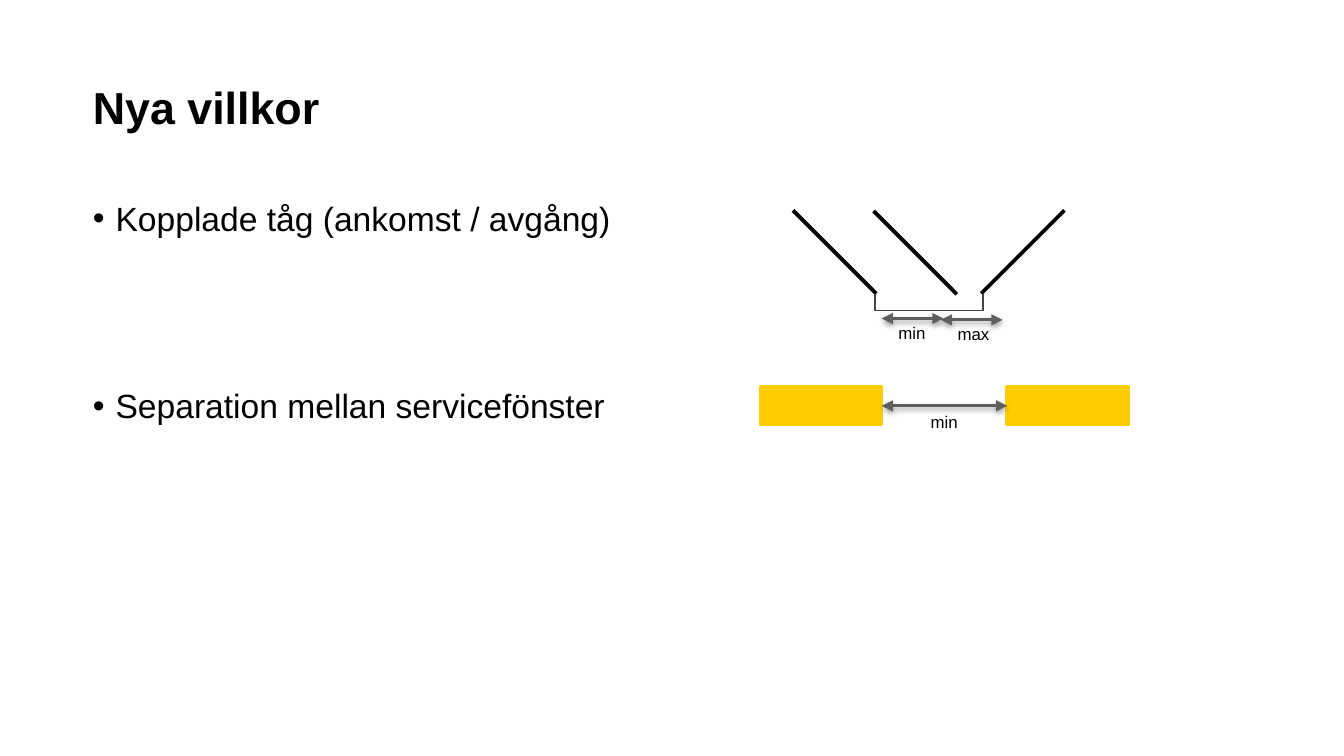
from dataclasses import dataclass

from lxml.etree import SubElement
from pptx import Presentation
from pptx.dml.color import RGBColor
from pptx.enum.shapes import MSO_CONNECTOR, MSO_SHAPE
from pptx.enum.text import MSO_ANCHOR, MSO_AUTO_SIZE, PP_ALIGN
from pptx.oxml.ns import qn
from pptx.util import Pt

EMU_PER_PX = 4572


@dataclass(frozen=True)
class Theme:
    font: str = "Arial"
    ink: str = "000000"
    arrow: str = "5F5F5F"
    bracket: str = "464646"
    window: str = "FFCC00"
    title_size: int = 24
    body_size: int = 18
    label_size: int = 9
    line_width: float = 2
    arrow_width: float = 1.5
    bracket_width: float = 1


THEME = Theme()


def px(value):
    return value * EMU_PER_PX


def rgb(value):
    return RGBColor.from_string(value)


def style_text(paragraph, size, bold=False):
    paragraph.alignment = PP_ALIGN.LEFT
    for run in paragraph.runs:
        run.font.name = THEME.font
        run.font.size = Pt(size)
        run.font.bold = bold
        run.font.color.rgb = rgb(THEME.ink)


def style_line(line, color, width):
    line.color.rgb = rgb(color)
    line.width = Pt(width)


def place(shape, left, top, width, height):
    shape.left, shape.top = px(left), px(top)
    shape.width, shape.height = px(width), px(height)


def set_margins(frame, side, top, bottom):
    frame.margin_left = frame.margin_right = px(side)
    frame.margin_top, frame.margin_bottom = px(top), px(bottom)


def prepare_placeholder(placeholder, top, height, margin_top):
    place(placeholder, 118, top, 1654, height)
    frame = placeholder.text_frame
    frame.word_wrap = True
    frame.auto_size = MSO_AUTO_SIZE.NONE
    frame.vertical_anchor = MSO_ANCHOR.TOP
    set_margins(frame, 20, margin_top, 0)
    return frame


def write_title(slide, text):
    frame = prepare_placeholder(slide.shapes.title, 118, 78, 10)
    frame.text = text
    heading = frame.paragraphs[0]
    heading.line_spacing = 0.9
    style_text(heading, THEME.title_size, bold=True)


def write_bullets(slide, conditions):
    frame = prepare_placeholder(slide.placeholders[1], 282, 662, 12)
    frame.text = "\n".join(text for text, _ in conditions)
    for paragraph, (_, space_after) in zip(frame.paragraphs, conditions):
        properties = paragraph._p.get_or_add_pPr()
        properties.set("marL", str(px(34)))
        properties.set("indent", str(px(-34)))
        SubElement(properties, qn("a:buChar"), char="•")
        paragraph.space_before = Pt(0)
        paragraph.space_after = Pt(space_after)
        style_text(paragraph, THEME.body_size)


def add_line(slide, start, end, color=THEME.ink, width=THEME.line_width):
    line = slide.shapes.add_connector(
        MSO_CONNECTOR.STRAIGHT, *map(px, start + end))
    style_line(line.line, color, width)
    SubElement(line._element.spPr, qn("a:effectLst"))
    return line


def add_span_arrow(slide, start, end):
    arrow = add_line(slide, start, end, THEME.arrow, THEME.arrow_width)
    for tip in ("a:headEnd", "a:tailEnd"):
        SubElement(arrow.line._get_or_add_ln(), qn(tip), type="triangle")
    effects = arrow._element.spPr.find(qn("a:effectLst"))
    shadow = SubElement(
        effects, qn("a:outerShdw"), blurRad=str(Pt(3)), dist=str(Pt(1.6)),
        dir="5400000", rotWithShape="0")
    shade = SubElement(shadow, qn("a:srgbClr"), val=THEME.ink)
    SubElement(shade, qn("a:alpha"), val="38000")
    return arrow


def add_label(slide, text, left, top, width):
    label = slide.shapes.add_textbox(px(left), px(top), px(width), px(50))
    frame = label.text_frame
    frame.word_wrap = False
    frame.auto_size = MSO_AUTO_SIZE.SHAPE_TO_FIT_TEXT
    set_margins(frame, 8, 10, 10)
    frame.text = text
    style_text(frame.paragraphs[0], THEME.label_size)


def add_bracket(slide, left, top, right, bottom):
    builder = slide.shapes.build_freeform(left, top, EMU_PER_PX)
    builder.add_line_segments(
        [(left, bottom), (right, bottom), (right, top)], close=False)
    bracket = builder.convert_to_shape()
    bracket.shadow.inherit = False
    bracket.fill.background()
    style_line(bracket.line, THEME.bracket, THEME.bracket_width)


def add_service_window(slide, left):
    window = slide.shapes.add_shape(
        MSO_SHAPE.RECTANGLE, px(left), px(576), px(180), px(56))
    window.shadow.inherit = False
    window.fill.solid()
    window.fill.fore_color.rgb = rgb(THEME.window)
    style_line(window.line, THEME.window, THEME.line_width)
    return window


def draw_coupled_trains(slide):
    for start, end in (
        ((1180, 313), (1304, 437)),
        ((1300, 314), (1424, 438)),
        ((1584, 313), (1460, 437)),
    ):
        add_line(slide, start, end)
    add_span_arrow(slide, (1400, 476), (1492, 476))
    add_span_arrow(slide, (1312, 474), (1404, 474))
    add_label(slide, "max", 1417, 472, 64)
    add_label(slide, "min", 1329, 470, 57)
    add_bracket(slide, 1302, 438, 1463, 462)


def draw_window_separation(slide):
    earlier, later = (add_service_window(slide, left) for left in (1132, 1499))
    separation = add_span_arrow(slide, (1312, 604), (1499, 604))
    separation.begin_connect(earlier, 3)
    separation.end_connect(later, 1)
    add_label(slide, "min", 1377, 603, 57)


def main():
    presentation = Presentation()
    presentation.slide_width, presentation.slide_height = px(2000), px(1125)
    slide = presentation.slides.add_slide(presentation.slide_layouts[1])
    write_title(slide, "Nya villkor")
    write_bullets(slide, [
        ("Kopplade tåg (ankomst / avgång)", 79),
        ("Separation mellan servicefönster", 24),
    ])
    draw_coupled_trains(slide)
    draw_window_separation(slide)
    presentation.save("out.pptx")


if __name__ == "__main__":
    main()
